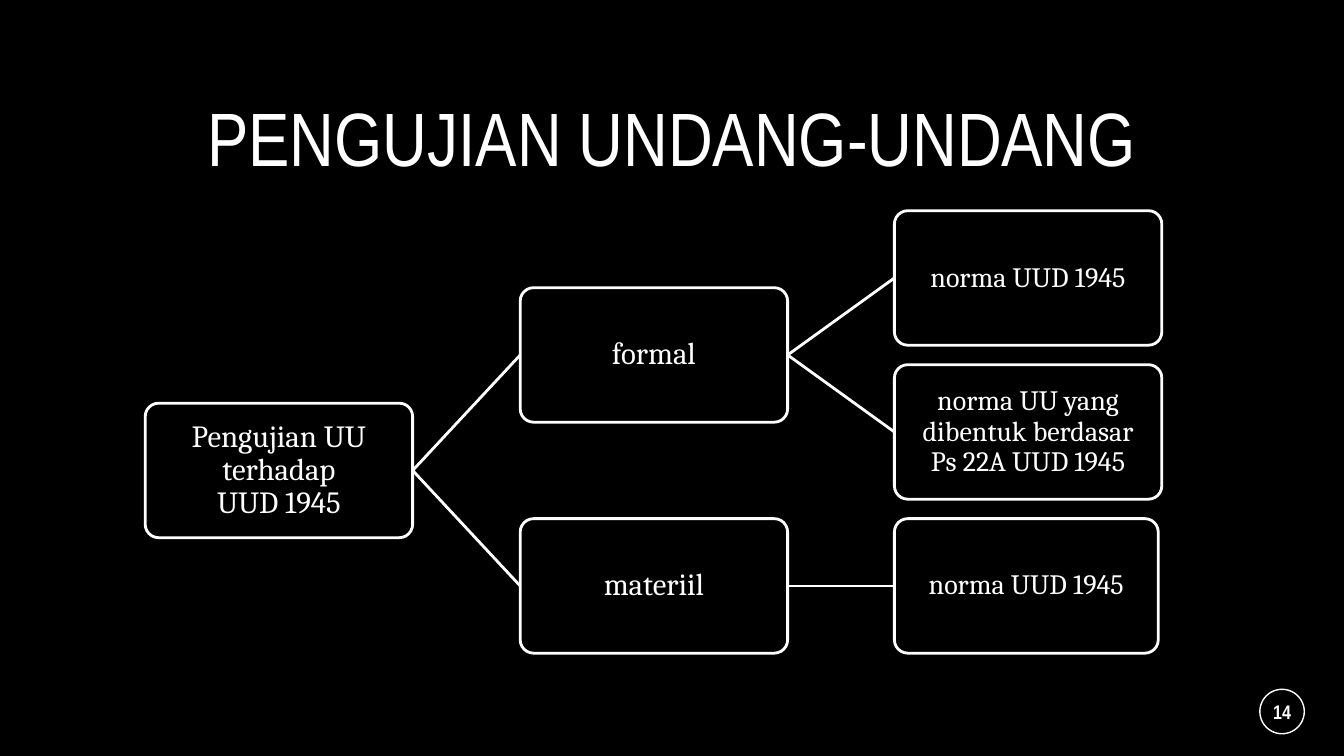
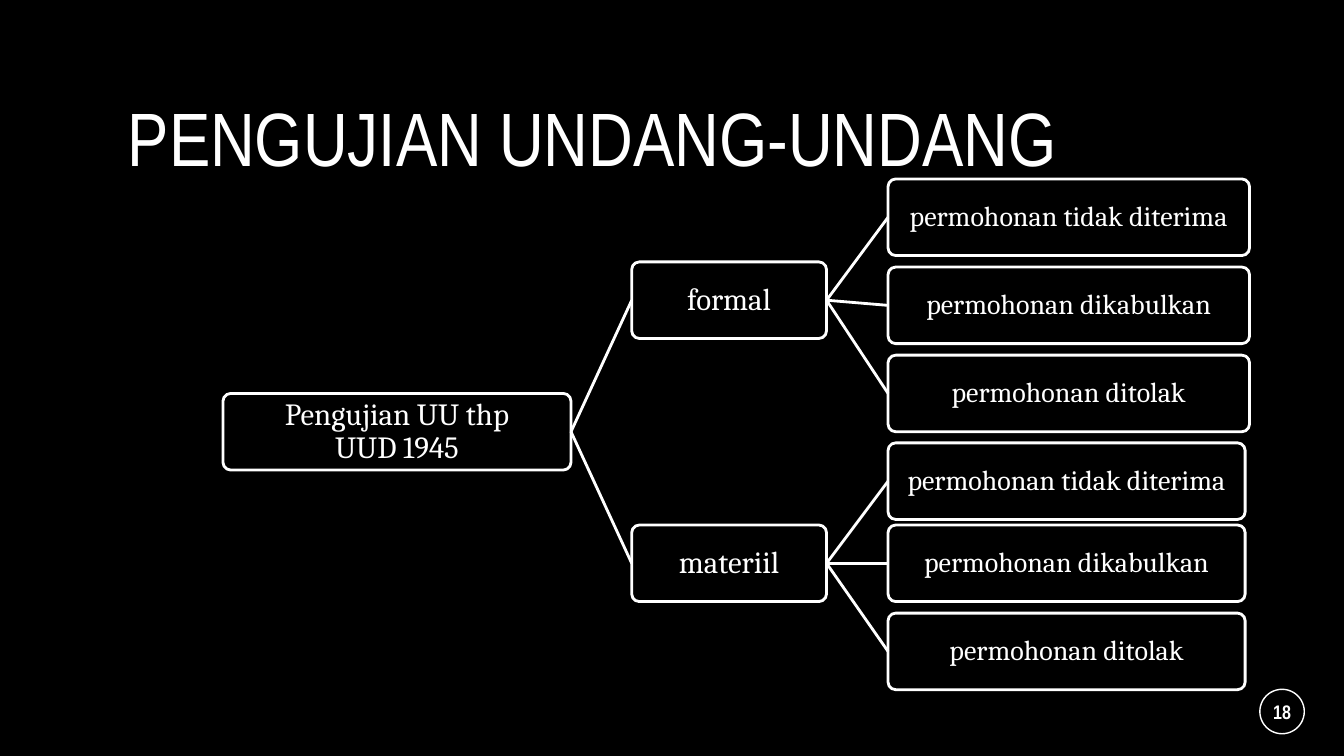
from dataclasses import dataclass

from lxml.etree import SubElement
from pptx import Presentation
from pptx.dml.color import RGBColor
from pptx.enum.shapes import MSO_CONNECTOR as Connector
from pptx.enum.shapes import MSO_SHAPE as Shape
from pptx.enum.text import MSO_ANCHOR as Anchor
from pptx.enum.text import PP_ALIGN as Align
from pptx.oxml.ns import qn
from pptx.util import Cm, Pt

BLACK = RGBColor(0x00, 0x00, 0x00)
WHITE = RGBColor(0xFF, 0xFF, 0xFF)
TITLE_FONT = "Arial Narrow"
BODY_FONT = "Cambria"
TITLE = "PENGUJIAN UNDANG-UNDANG"
TITLE_BOX = (2.97, 1.35, 27.94, 4.47)
BADGE_BOX = (31.75, 17.37, 1.12, 1.12)
CORNER = 0.1
LEFT_SITE, RIGHT_SITE = 1, 3
RIGHT_ROW = 3.88


@dataclass
class Branch:
    """A middle node with its leaves as (top, lines) pairs."""
    text: str
    top: float
    leaf_width: float
    leaves: list


@dataclass
class Tree:
    """A three-column tree; columns are (offset, width) pairs in centimetres."""
    left: float
    top: float
    node_height: float
    root_column: tuple
    branch_column: tuple
    leaf_offset: float
    root_lines: list
    branches: list


def write_lines(shape, lines, size, font, align=Align.CENTER, spacing=0.9, inset=0.12, bold=False):
    """Fill a shape with one paragraph per line."""
    frame = shape.text_frame
    frame.word_wrap = True
    frame.vertical_anchor = Anchor.MIDDLE
    frame.margin_left = frame.margin_right = Cm(inset)
    frame.margin_top = frame.margin_bottom = Cm(inset / 2)
    for index, line in enumerate(lines):
        paragraph = frame.paragraphs[0] if index == 0 else frame.add_paragraph()
        paragraph.alignment = align
        paragraph.line_spacing = spacing
        run = paragraph.add_run()
        run.text = line
        run.font.name = font
        run.font.size = Pt(size)
        run.font.bold = bold
        run.font.color.rgb = WHITE


def add_outline(slide, kind, box, line_width):
    """Add an unfilled shape with a white outline."""
    shape = slide.shapes.add_shape(kind, *map(Cm, box))
    shape.shadow.inherit = False
    shape.fill.background()
    shape.line.color.rgb = WHITE
    shape.line.width = Pt(line_width)
    return shape


def add_title(slide, box, align):
    """Add the heading in the given box."""
    title = slide.shapes.add_textbox(*map(Cm, box))
    write_lines(title, [TITLE], 54, TITLE_FONT, align, inset=0.25)


def add_badge(slide, box, number):
    """Add the circled page number."""
    badge = add_outline(slide, Shape.OVAL, box, 1)
    write_lines(badge, [str(number)], 14, TITLE_FONT, spacing=1.0, inset=0, bold=True)


def add_node(slide, box, lines, size):
    """Add one rounded node of the tree."""
    node = add_outline(slide, Shape.ROUNDED_RECTANGLE, box, 2)
    node.adjustments[0] = CORNER
    write_lines(node, lines, size, BODY_FONT)
    return node


def link(slide, parent, child):
    """Join the right side of a parent to the left side of its child."""
    connector = slide.shapes.add_connector(Connector.STRAIGHT, 0, 0, 0, 0)
    connector.begin_connect(parent, RIGHT_SITE)
    connector.end_connect(child, LEFT_SITE)
    connector.line.color.rgb = WHITE
    connector.line.width = Pt(2)
    SubElement(connector._element.spPr, qn("a:effectLst"))


def add_tree(slide, tree):
    """Draw the tree, its root centred between the outer branches."""
    def place(column, top, lines, size):
        offset, width = column
        box = (tree.left + offset, tree.top + top, width, tree.node_height)
        return add_node(slide, box, lines, size)

    root_top = (tree.branches[0].top + tree.branches[-1].top) / 2
    root = place(tree.root_column, root_top, tree.root_lines, 22)
    for branch in tree.branches:
        middle = place(tree.branch_column, branch.top, [branch.text], 22)
        link(slide, root, middle)
        for top, lines in branch.leaves:
            leaf = place((tree.leaf_offset, branch.leaf_width), top, lines, 20)
            link(slide, middle, leaf)


def add_tree_slide(presentation, number, title_align, tree):
    """Add a slide with heading, page number and tree."""
    slide = presentation.slides.add_slide(presentation.slide_layouts[6])
    add_title(slide, TITLE_BOX, title_align)
    add_badge(slide, BADGE_BOX, number)
    add_tree(slide, tree)


def verdicts(*tops):
    """Pair the three possible rulings with their tops."""
    rulings = ("tidak diterima", "dikabulkan", "ditolak")
    return [(top, [f"permohonan {ruling}"]) for top, ruling in zip(tops, rulings)]


NORMS = Tree(
    left=3.66, top=5.31, node_height=3.39,
    root_column=(0, 6.74), branch_column=(9.45, 6.74), leaf_offset=18.88,
    root_lines=["Pengujian UU terhadap", "UUD 1945"],
    branches=[
        Branch("formal", RIGHT_ROW / 2, 6.74, [
            (0, ["norma UUD 1945"]),
            (RIGHT_ROW, ["norma UU yang dibentuk berdasar", "Ps 22A UUD 1945"]),
        ]),
        Branch("materiil", 2 * RIGHT_ROW, 6.65, [(2 * RIGHT_ROW, ["norma UUD 1945"])]),
    ],
)

RULINGS = Tree(
    left=5.62, top=4.51, node_height=1.93,
    root_column=(0, 8.77), branch_column=(10.3, 4.91), leaf_offset=16.76,
    root_lines=["Pengujian UU thp", "UUD 1945"],
    branches=[
        Branch("formal", 2.09, 9.11, verdicts(0, 2.22, 4.44)),
        Branch("materiil", 8.72, 9.0, verdicts(6.65, 8.72, 10.94)),
    ],
)


def main():
    """Build and save the presentation."""
    presentation = Presentation()
    presentation.slide_width = Cm(33.87)
    presentation.slide_height = Cm(19.05)
    background = presentation.slide_master.background.fill
    background.solid()
    background.fore_color.rgb = BLACK
    add_tree_slide(presentation, 14, Align.CENTER, NORMS)
    add_tree_slide(presentation, 18, Align.LEFT, RULINGS)
    presentation.save("out.pptx")


if __name__ == "__main__":
    main()
